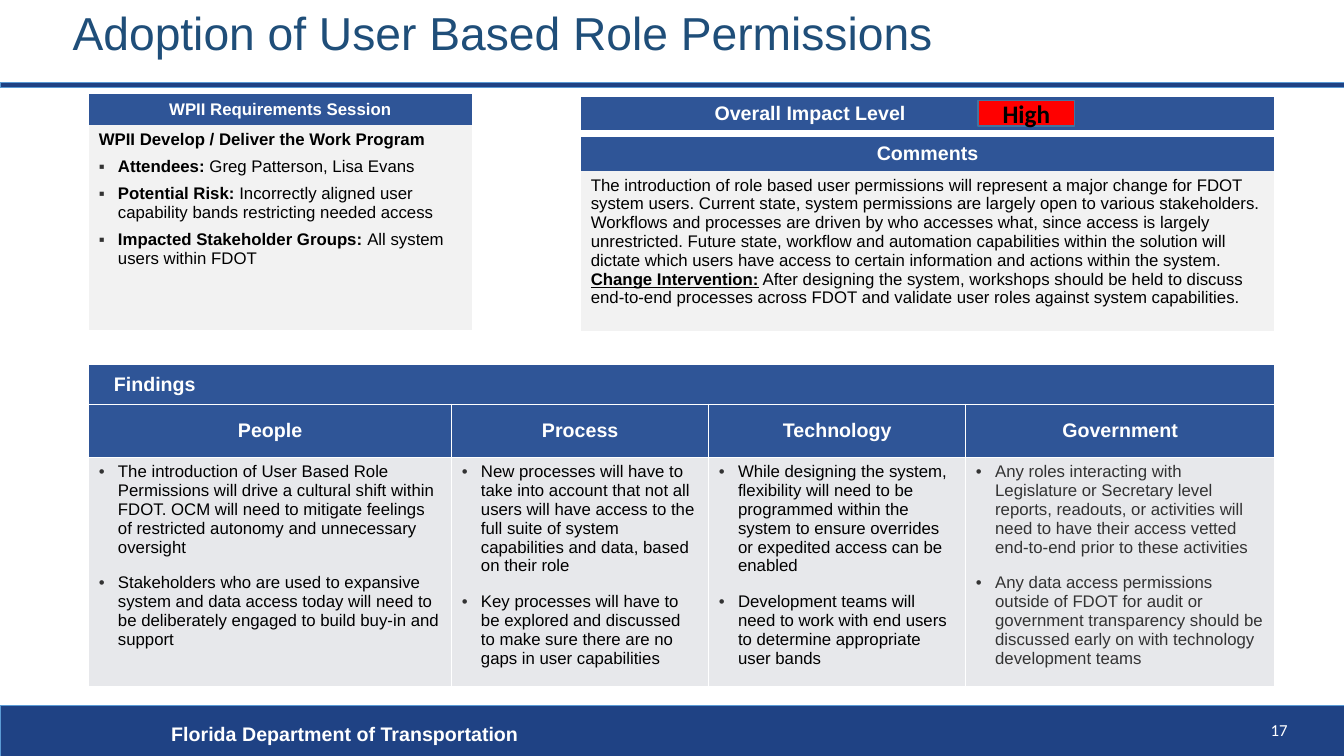
from dataclasses import dataclass

import pptx
import pptx.dml.color
import pptx.enum.shapes
import pptx.enum.text
import pptx.oxml
import pptx.oxml.ns
import pptx.util

Inches = pptx.util.Inches
Pt = pptx.util.Pt
Align = pptx.enum.text.PP_ALIGN
Anchor = pptx.enum.text.MSO_ANCHOR

NAVY, BLUE, WHITE, BLACK = "1F4284", "2F5597", "FFFFFF", "000000"
CHARCOAL, PALE, SILVER = "333333", "F2F2F2", "E7E8EB"
PLAIN_STYLE = "{2D5ABB26-0587-4C30-8999-92F81FD0307C}"


@dataclass
class Span:
    text: str
    size: float = 12
    color: str = BLACK
    bold: bool = False
    underline: bool = False
    font: str = "Arial"


@dataclass
class Para:
    spans: list[Span]
    align: Align = Align.LEFT
    bullet: str = ""
    before: float = 0
    after: float = 0
    indent: float = 0


@dataclass
class Cell:
    paras: list[Para]
    fill: str = BLUE
    anchor: Anchor = Anchor.MIDDLE


@dataclass
class Grid:
    left: float
    top: float
    columns: list[float]
    rows: list[float]
    cells: list[list[Cell]]
    border: str = ""


@dataclass
class Bar:
    left: float
    top: float
    width: float
    height: float
    fill: str
    line: str
    weight: float


def rgb(color: str) -> pptx.dml.color.RGBColor:
    return pptx.dml.color.RGBColor.from_string(color)


def add_xml(parent, markup: str) -> None:
    opening, rest = markup.split(" ", 1)
    namespace = pptx.oxml.ns.nsdecls("a")
    parent.append(pptx.oxml.parse_xml(f"{opening} {namespace} {rest}"))


def write(frame, paras: list[Para]) -> None:
    for index, item in enumerate(paras):
        para = frame.paragraphs[0] if index == 0 else frame.add_paragraph()
        para.alignment = item.align
        para.space_after = Pt(item.after)
        if index:
            para.space_before = Pt(item.before)
        properties = para._p.get_or_add_pPr()
        properties.set("marL", str(Inches(item.indent)))
        if item.bullet:
            properties.set("indent", str(-Inches(item.indent)))
            add_xml(properties, f'<a:buClr ><a:srgbClr val="{CHARCOAL}"/></a:buClr>')
            add_xml(properties, '<a:buFont typeface="Arial"/>')
            add_xml(properties, f'<a:buChar char="{item.bullet}"/>')
        for span in item.spans:
            run = para.add_run()
            run.text = span.text
            run.font.name = span.font
            run.font.size = Pt(span.size)
            run.font.bold = span.bold
            run.font.underline = span.underline
            run.font.color.rgb = rgb(span.color)


def add_bar(page, bar: Bar):
    shape = page.shapes.add_shape(
        pptx.enum.shapes.MSO_SHAPE.RECTANGLE,
        Inches(bar.left), Inches(bar.top), Inches(bar.width), Inches(bar.height))
    shape.shadow.inherit = False
    shape.fill.solid()
    shape.fill.fore_color.rgb = rgb(bar.fill)
    shape.line.color.rgb = rgb(bar.line)
    shape.line.width = Pt(bar.weight)
    return shape


def add_text(page, left: float, top: float, width: float, height: float, para: Para) -> None:
    box = page.shapes.add_textbox(Inches(left), Inches(top), Inches(width), Inches(height))
    box.text_frame.word_wrap = True
    write(box.text_frame, [para])


def add_grid(page, grid: Grid) -> None:
    table = page.shapes.add_table(
        len(grid.rows), len(grid.columns), Inches(grid.left), Inches(grid.top),
        Inches(sum(grid.columns)), Inches(sum(grid.rows))).table
    table._tbl.tblPr.find(pptx.oxml.ns.qn("a:tableStyleId")).text = PLAIN_STYLE
    table.first_row = table.horz_banding = False
    for column, width in zip(table.columns, grid.columns):
        column.width = Inches(width)
    for row, height in zip(table.rows, grid.rows):
        row.height = Inches(height)
    for r, line in enumerate(grid.cells):
        if len(line) < len(grid.columns):
            table.cell(r, 0).merge(table.cell(r, len(grid.columns) - 1))
        for c, item in enumerate(line):
            cell = table.cell(r, c)
            if grid.border:
                for side in "LRTB":
                    add_xml(cell._tc.get_or_add_tcPr(),
                            f'<a:ln{side} w="{Pt(1)}"><a:solidFill>'
                            f'<a:srgbClr val="{grid.border}"/></a:solidFill></a:ln{side}>')
            cell.fill.solid()
            cell.fill.fore_color.rgb = rgb(item.fill)
            cell.vertical_anchor = item.anchor
            if not item.paras:
                cell.margin_top = cell.margin_bottom = 0
            write(cell.text_frame, item.paras)


def header(text: str, size: float = 14, align: Align = Align.CENTER, indent: float = 0) -> Cell:
    return Cell([Para([Span(text, size, WHITE, True)], align, indent=indent)])


def finding(texts: list[str], color: str = BLACK) -> Cell:
    return Cell([Para([Span(text, color=color)], bullet="•", before=4, after=8, indent=0.19)
                 for text in texts], SILVER, Anchor.TOP)


def requirement(label: str, detail: str) -> Para:
    return Para([Span(label, bold=True), Span(detail)], bullet="▪", after=6, indent=0.19)


FINDINGS = Grid(0.88, 3.62, [3.6, 2.55, 2.55, 3.06], [0.39, 0.53, 2.12], [
    [header("Findings", align=Align.LEFT, indent=0.15)],
    [header(name) for name in ("People", "Process", "Technology", "Government")],
    [finding([
        "The introduction of User Based Role Permissions will drive a cultural shift within FDOT. OCM will need to mitigate feelings of restricted autonomy and unnecessary oversight",
        "Stakeholders who are used to expansive system and data access today will need to be deliberately engaged to build buy-in and support"]),
     finding([
         "New processes will have to take into account that not all users will have access to the full suite of system capabilities and data, based on their role",
         "Key processes will have to be explored and discussed to make sure there are no gaps in user capabilities"]),
     finding([
         "While designing the system, flexibility will need to be programmed within the system to ensure overrides or expedited access can be enabled",
         "Development teams will need to work with end users to determine appropriate user bands"]),
     finding([
         "Any roles interacting with Legislature or Secretary level reports, readouts, or activities will need to have their access vetted end-to-end prior to these activities",
         "Any data access permissions outside of FDOT for audit or government transparency should be discussed early on with technology development teams"], CHARCOAL)],
], WHITE)

REQUIREMENTS = Grid(0.88, 0.93, [3.8], [0.31, 2.03], [
    [header("WPII Requirements Session", 12)],
    [Cell([
        Para([Span("WPII Develop / Deliver the Work Program", bold=True)], after=6),
        requirement("Attendees: ", "Greg Patterson, Lisa Evans"),
        requirement("Potential Risk: ", "Incorrectly aligned user capability bands restricting needed access"),
        requirement("Impacted Stakeholder Groups: ", "All system users within FDOT"),
    ], PALE, Anchor.TOP)]])

COMMENTS = Grid(5.76, 1.36, [6.88], [0.32, 1.59], [
    [header("Comments")],
    [Cell([Para([
        Span("The introduction of role based user permissions will represent a major change for FDOT system users. Current state, system permissions are largely open to various stakeholders. Workflows and processes are driven by who accesses what, since access is largely unrestricted. Future state, workflow and automation capabilities within the solution will dictate which users have access to certain information and actions within the system. "),
        Span("Change Intervention:", bold=True, underline=True),
        Span(" After designing the system, workshops should be held to discuss end-to-end processes across FDOT and validate user roles against system capabilities."),
    ], after=6)], PALE, Anchor.TOP)]])

IMPACT = Grid(5.76, 0.96, [4.55, 2.33], [0.32], [[header("Overall Impact Level"), Cell([])]])


def main() -> None:
    deck = pptx.Presentation()
    deck.slide_width, deck.slide_height = Inches(13.33), Inches(7.5)
    page = deck.slides.add_slide(deck.slide_layouts[5])

    for bar in (Bar(0, 7, 13.33, 0.5, NAVY, "5B9BD5", 0.5), Bar(0, 0.82, 13.33, 0.05, NAVY, "5B9BD5", 0.5)):
        add_bar(page, bar)
    add_text(page, 1.6, 7.11, 7.98, 0.34, Para([Span("Florida Department of Transportation", 14, WHITE, True)]))
    add_text(page, 11.74, 7.09, 1.13, 0.3, Para([Span("17", 12, WHITE, font="Calibri")], Align.RIGHT))

    title = page.shapes.title
    title.left, title.top, title.width, title.height = (Inches(n) for n in (0.62, -0.01, 10.38, 0.72))
    title.text_frame.auto_size = pptx.enum.text.MSO_AUTO_SIZE.NONE
    title.text_frame.vertical_anchor = Anchor.MIDDLE
    write(title.text_frame, [Para([Span("Adoption of User Based Role Permissions", 33, "1F4E79")])])
    title.text_frame.paragraphs[0].line_spacing = 0.9

    for grid in (FINDINGS, REQUIREMENTS, COMMENTS, IMPACT):
        add_grid(page, grid)
    level = add_bar(page, Bar(9.7, 1, 0.96, 0.25, "FF0000", "43739E", 1))
    level.text_frame.vertical_anchor = Anchor.MIDDLE
    write(level.text_frame, [Para([Span("High", 18, bold=True, font="Calibri")], Align.CENTER)])
    deck.save("out.pptx")


if __name__ == "__main__":
    main()
